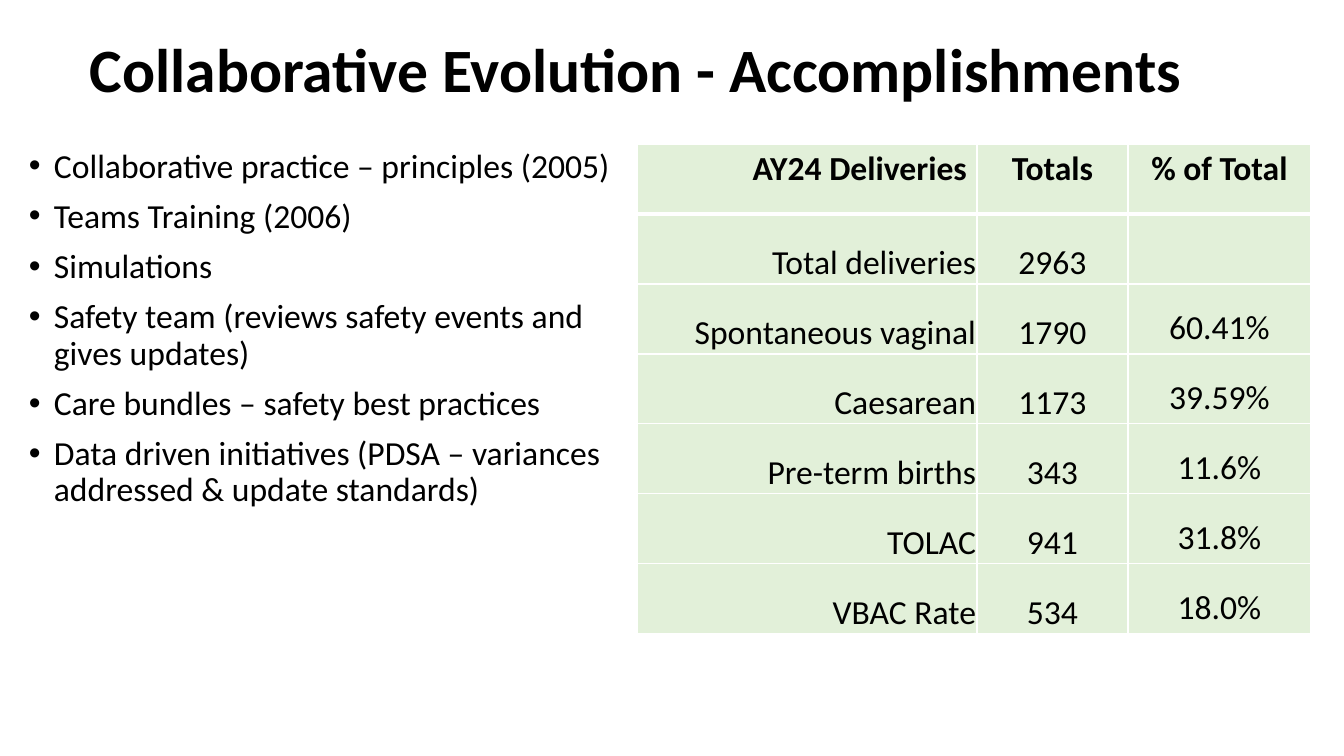
import pptx
import pptx.dml.color
import pptx.enum.text
import pptx.oxml
import pptx.util
from pptx.oxml.ns import qn

PX = 914400 / 100.8
FONT = "Calibri"
COLOURS = {"text": "000000", "cell": "E2F0D9", "border": "FFFFFF"}
ALIGN = pptx.enum.text.PP_ALIGN
ANCHOR = pptx.enum.text.MSO_ANCHOR

TITLE = "Collaborative Evolution - Accomplishments"
ACCOMPLISHMENTS = [
    "Collaborative practice – principles (2005)",
    "Teams Training (2006)",
    "Simulations",
    "Safety team (reviews safety events and gives updates)",
    "Care bundles – safety best practices",
    "Data driven initiatives (PDSA – variances addressed & update standards)",
]
DELIVERIES = [
    ("AY24 Deliveries", "Totals", "% of Total"),
    ("Total deliveries", "2963", ""),
    ("Spontaneous vaginal", "1790", "60.41%"),
    ("Caesarean", "1173", "39.59%"),
    ("Pre-term births", "343", "11.6%"),
    ("TOLAC", "941", "31.8%"),
    ("VBAC Rate", "534", "18.0%"),
]
COLUMN_WIDTHS = [340, 151, 183]
ROW_HEIGHT = 70


def px(length):
    return pptx.util.Emu(round(length * PX))


def colour(name):
    return pptx.dml.color.RGBColor.from_string(COLOURS[name])


def format_runs(para, size, bold=False):
    for span in para.runs:
        span.font.name = FONT
        span.font.size = pptx.util.Pt(size)
        span.font.bold = bold
        span.font.color.rgb = colour("text")


def add_text_frame(page, left, top, width, height):
    box = page.shapes.add_textbox(px(left), px(top), px(width), px(height))
    box.text_frame.word_wrap = True
    return box.text_frame


def add_title(page):
    frame = add_text_frame(page, 57, 32, 1159, 82)
    frame.vertical_anchor = ANCHOR.MIDDLE
    frame.text = TITLE
    para = frame.paragraphs[0]
    para.alignment = ALIGN.CENTER
    para.line_spacing = 0.9
    format_runs(para, 44, bold=True)


def add_bullet(para):
    """Give the paragraph a round bullet with a hanging indent."""
    indent = px(25)
    properties = para._p.get_or_add_pPr()
    properties.set("marL", str(indent))
    properties.set("indent", str(-indent))
    font = pptx.oxml.parse_xml(
        f'<a:buFont {pptx.oxml.ns.nsdecls("a")} typeface="Arial"/>')
    bullet = pptx.oxml.parse_xml(
        f'<a:buChar {pptx.oxml.ns.nsdecls("a")} char="•"/>')
    properties.extend([font, bullet])


def add_bullet_list(page):
    frame = add_text_frame(page, 19, 144, 618, 493)
    frame.text = "\n".join(ACCOMPLISHMENTS)
    for index, para in enumerate(frame.paragraphs):
        add_bullet(para)
        para.line_spacing = 0.9
        if index:
            para.space_before = pptx.util.Pt(10)
        format_runs(para, 24)


def set_borders(cell, bottom_width, top_width):
    properties = cell._tc.get_or_add_tcPr()
    widths = {"lnL": 1, "lnR": 1, "lnT": top_width, "lnB": bottom_width}
    for position, (side, width) in enumerate(widths.items()):
        line = properties.makeelement(
            qn(f"a:{side}"), {"w": str(pptx.util.Pt(width))})
        fill = pptx.oxml.parse_xml(
            f'<a:solidFill {pptx.oxml.ns.nsdecls("a")}>'
            f'<a:srgbClr val="{COLOURS["border"]}"/></a:solidFill>')
        line.append(fill)
        properties.insert(position, line)


def format_cell(cell, text, row, column):
    cell.text = text
    cell.fill.solid()
    cell.fill.fore_color.rgb = colour("cell")
    is_header = row == 0
    set_borders(cell, 3 if is_header else 1, 3 if row == 1 else 1)
    if not is_header:
        cell.vertical_anchor = ANCHOR.BOTTOM
        if column < 2:
            cell.margin_left = cell.margin_right = cell.margin_top = px(1)
            cell.margin_bottom = 0
    para = cell.text_frame.paragraphs[0]
    para.alignment = ALIGN.CENTER if column else ALIGN.RIGHT
    format_runs(para, 24, bold=is_header)


def add_deliveries_table(page):
    rows, columns = len(DELIVERIES), len(COLUMN_WIDTHS)
    table = page.shapes.add_table(
        rows, columns, px(637), px(144),
        px(sum(COLUMN_WIDTHS)), px(rows * ROW_HEIGHT)).table
    for column, width in zip(table.columns, COLUMN_WIDTHS):
        column.width = px(width)
    for row, values in enumerate(DELIVERIES):
        table.rows[row].height = px(ROW_HEIGHT)
        for column, text in enumerate(values):
            format_cell(table.cell(row, column), text, row, column)


def main():
    deck = pptx.Presentation()
    deck.slide_width, deck.slide_height = px(1344), px(756)
    page = deck.slides.add_slide(deck.slide_layouts[6])
    add_title(page)
    add_bullet_list(page)
    add_deliveries_table(page)
    deck.save("out.pptx")


if __name__ == "__main__":
    main()
